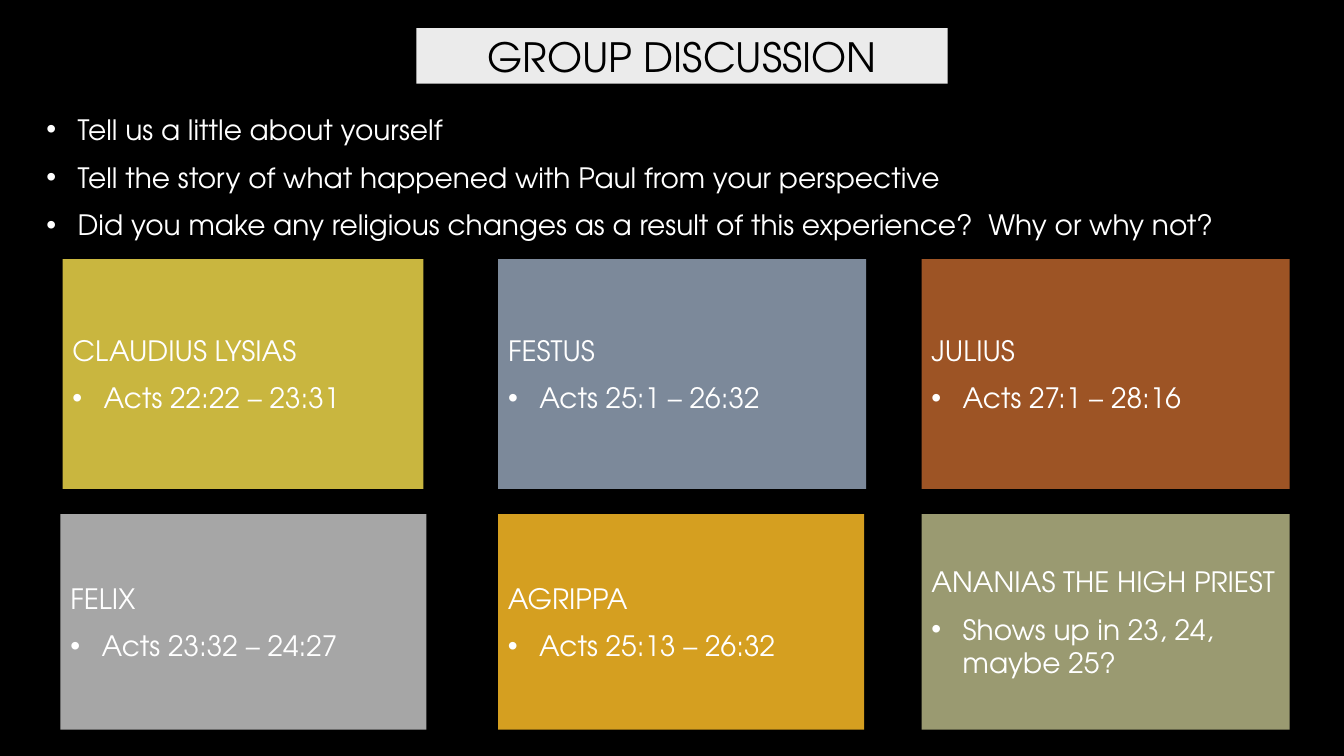
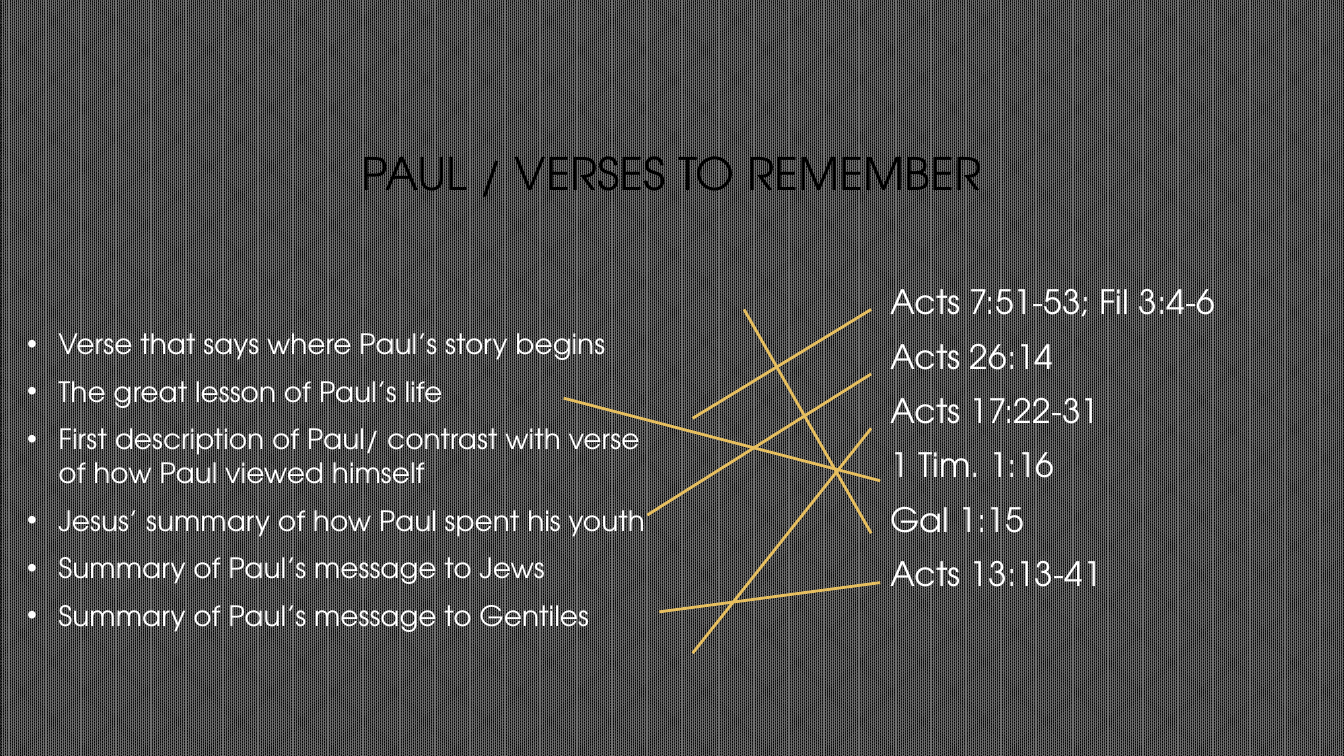
from lxml import etree
from pptx import Presentation
from pptx.dml.color import RGBColor
from pptx.enum.dml import MSO_PATTERN
from pptx.enum.shapes import MSO_CONNECTOR, MSO_SHAPE
from pptx.enum.text import MSO_ANCHOR, MSO_AUTO_SIZE, PP_ALIGN
from pptx.oxml.ns import qn
from pptx.util import Pt

PX = 9144
FONT = "TeX Gyre Adventor"
TITLE_AND_CONTENT = 1
BULLET_INDENT = 31
COLORS = {
    "black": "000000",
    "white": "FFFFFF",
    "title_band": "EBEBEB",
    "weave": "6F6F6F",
    "match_line": "E7BF5F",
    "yellow": "C9B63F",
    "slate": "7C899A",
    "rust": "9D5425",
    "gray": "A6A6A6",
    "amber": "D59F20",
    "olive": "9A9A71",
}

QUESTIONS = [
    "Tell us a little about yourself",
    "Tell the story of what happened with Paul from your perspective",
    "Did you make any religious changes as a result of this experience?  Why or why not?",
]
CARD_ROWS = [
    (257, 228, [
        (62, 358, "yellow", "CLAUDIUS LYSIAS", "Acts 22:22 – 23:31"),
        (494, 365, "slate", "FESTUS", "Acts 25:1 – 26:32"),
        (914, 365, "rust", "JULIUS", "Acts 27:1 – 28:16"),
    ]),
    (510, 214, [
        (60, 363, "gray", "FELIX", "Acts 23:32 – 24:27"),
        (494, 363, "amber", "AGRIPPA", "Acts 25:13 – 26:32"),
        (914, 365, "olive", "ANANIAS THE HIGH PRIEST", "Shows up in 23, 24, maybe 25?"),
    ]),
]
CLUES = [
    "Verse that says where Paul’s story begins",
    "The great lesson of Paul’s life",
    "First description of Paul/ contrast with verse \nof how Paul viewed himself",
    "Jesus’ summary of how Paul spent his youth",
    "Summary of Paul’s message to Jews",
    "Summary of Paul’s message to Gentiles",
]
VERSES = [
    "Acts 7:51-53; Fil 3:4-6",
    "Acts 26:14",
    "Acts 17:22-31",
    "1 Tim. 1:16",
    "Gal 1:15",
    "Acts 13:13-41",
]
MATCHES = [
    (559, 395, 873, 477),
    (738, 307, 864, 529),
    (687, 415, 864, 307),
    (642, 511, 864, 371),
    (687, 648, 864, 425),
    (654, 607, 873, 578),
]


def emu(*lengths):
    return [length * PX for length in lengths]


def rgb(name):
    return RGBColor.from_string(COLORS[name])


def place(part, box):
    part.left, part.top, part.width, part.height = emu(*box)


def paint(part, color):
    part.fill.solid()
    part.fill.fore_color.rgb = rgb(color)


def style_runs(paragraph, size, color):
    for run in paragraph.runs:
        run.font.name = FONT
        run.font.size = Pt(size)
        run.font.color.rgb = rgb(color)
    for line_break in paragraph._p.findall(qn("a:br")):
        etree.SubElement(line_break, qn("a:rPr"), sz=str(size * 100))


def add_bullet(paragraph):
    properties = paragraph._p.get_or_add_pPr()
    indent = BULLET_INDENT * PX
    properties.set("marL", str(indent))
    properties.set("indent", str(-indent))
    color = etree.SubElement(properties, qn("a:buClr"))
    etree.SubElement(color, qn("a:srgbClr"), val=COLORS["white"])
    etree.SubElement(properties, qn("a:buFont"), typeface="Arial")
    etree.SubElement(properties, qn("a:buChar"), char="•")


def write_lines(frame, lines, size=20, first_bullet=0, anchor=MSO_ANCHOR.MIDDLE):
    frame.word_wrap = True
    frame.auto_size = MSO_AUTO_SIZE.NONE
    frame.vertical_anchor = anchor
    for index, line in enumerate(lines):
        paragraph = frame.add_paragraph() if index else frame.paragraphs[0]
        paragraph.text = line
        paragraph.alignment = PP_ALIGN.LEFT
        paragraph.space_before = Pt(size // 5 if index else 0)
        paragraph.space_after = Pt(6)
        if index >= first_bullet:
            add_bullet(paragraph)
        style_runs(paragraph, size, "white")


def add_title(slide, text, box, size):
    title = slide.shapes.title
    place(title, box)
    frame = title.text_frame
    frame.text = text
    frame.word_wrap = True
    frame.auto_size = MSO_AUTO_SIZE.NONE
    frame.vertical_anchor = MSO_ANCHOR.MIDDLE
    frame.paragraphs[0].alignment = PP_ALIGN.CENTER
    style_runs(frame.paragraphs[0], size, "black")
    return title


def add_list(slide, lines, box):
    body = slide.placeholders[1]
    place(body, box)
    write_lines(body.text_frame, lines)


def add_card(slide, box, color, person, passage):
    card = slide.shapes.add_shape(MSO_SHAPE.RECTANGLE, *emu(*box))
    card.shadow.inherit = False
    card.line.fill.background()
    paint(card, color)
    write_lines(card.text_frame, [person, passage], first_bullet=1)


def add_verses(slide, box):
    verses = slide.shapes.add_textbox(*emu(*box))
    write_lines(verses.text_frame, VERSES, 24, len(VERSES), MSO_ANCHOR.TOP)


def add_match(slide, ends):
    match = slide.shapes.add_connector(MSO_CONNECTOR.STRAIGHT, *emu(*ends))
    match.line.color.rgb = rgb("match_line")
    match.line.width = Pt(2)
    etree.SubElement(match._element.spPr, qn("a:effectLst"))


def add_slide(deck):
    return deck.slides.add_slide(deck.slide_layouts[TITLE_AND_CONTENT])


def build_discussion(deck):
    slide = add_slide(deck)
    paint(slide.background, "black")
    title = add_title(slide, "GROUP DISCUSSION", (413, 28, 527, 55), 28.8)
    paint(title, "title_band")
    add_list(slide, QUESTIONS, (36, 107, 1281, 137))
    for top, height, cards in CARD_ROWS:
        for left, width, *content in cards:
            add_card(slide, (left, top, width, height), *content)


def build_verses(deck):
    slide = add_slide(deck)
    weave = slide.background.fill
    weave.patterned()
    weave.pattern = MSO_PATTERN.PERCENT_90
    weave.fore_color.rgb = rgb("weave")
    weave.back_color.rgb = rgb("black")
    add_title(slide, "PAUL / VERSES TO REMEMBER", (125, 67, 1083, 208), 32)
    add_list(slide, CLUES, (17, 218, 1300, 515))
    add_verses(slide, (873, 274, 401, 404))
    for ends in MATCHES:
        add_match(slide, ends)


def main():
    deck = Presentation()
    deck.slide_width, deck.slide_height = emu(1333, 750)
    build_discussion(deck)
    build_verses(deck)
    deck.save("out.pptx")


if __name__ == "__main__":
    main()
